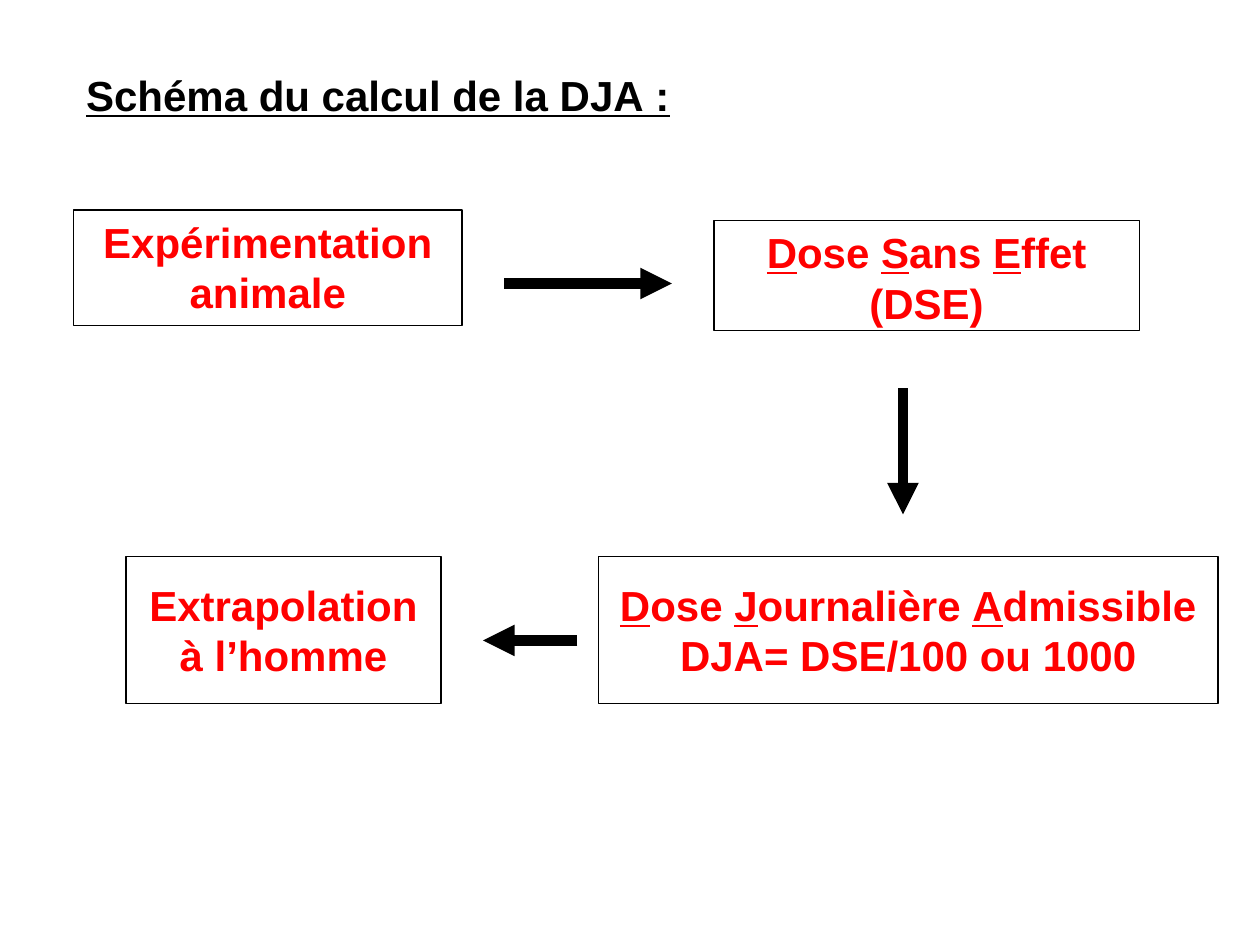
"""Build the slide showing how the acceptable daily intake (DJA) is worked out."""
from dataclasses import dataclass

from lxml.etree import SubElement
from pptx import Presentation
from pptx.dml.color import RGBColor
from pptx.enum.shapes import MSO_CONNECTOR, MSO_SHAPE
from pptx.enum.text import MSO_ANCHOR, PP_ALIGN
from pptx.oxml.ns import qn
from pptx.util import Pt


@dataclass(frozen=True)
class Theme:
    font: str = "Arial"
    size: int = 24
    ink: RGBColor = RGBColor(0, 0, 0)
    accent: RGBColor = RGBColor(255, 0, 0)
    paper: RGBColor = RGBColor(255, 255, 255)


theme = Theme()


def write(frame, text, *, color, align, top=3.6):
    """Write bold text in which pieces between underscores are underlined."""
    frame.word_wrap = True
    frame.vertical_anchor = MSO_ANCHOR.TOP
    frame.margin_left = frame.margin_right = Pt(7.2)
    frame.margin_top, frame.margin_bottom = Pt(top), Pt(3.6)
    paragraph = frame.paragraphs[0]
    paragraph.alignment = align
    paragraph.space_before = Pt(0)
    paragraph.line_spacing = 1.0
    for index, piece in enumerate(text.split("_")):
        if piece:
            run = paragraph.add_run()
            run.text = piece
            run.font.name, run.font.size = theme.font, Pt(theme.size)
            run.font.bold, run.font.underline = True, index % 2 == 1
            run.font.color.rgb = color


deck = Presentation()
deck.slide_width, deck.slide_height = Pt(720), Pt(540)
slide = deck.slides.add_slide(deck.slide_layouts[5])

heading = slide.shapes.title
heading.left, heading.top, heading.width, heading.height = Pt(42), Pt(36), Pt(540), Pt(79)
write(heading.text_frame, "_Schéma du calcul de la DJA\u00a0:_",
      color=theme.ink, align=PP_ALIGN.JUSTIFY)

steps = [
    ("Expérimentation animale", 42, 120, 222, 66, 3.6),
    ("_D_ose _S_ans _E_ffet (DSE)", 408, 126, 243, 63, 3.6),
    ("_D_ose _J_ournalière _A_dmissible DJA= DSE/100 ou 1000", 342, 318, 354, 84, 13),
    ("Extrapolation à l’homme", 72, 318, 180, 84, 13),
]
for label, left, top, width, height, inset in steps:
    step = slide.shapes.add_shape(MSO_SHAPE.RECTANGLE, Pt(left), Pt(top), Pt(width), Pt(height))
    step.shadow.inherit = False
    step.fill.solid()
    step.fill.fore_color.rgb = theme.paper
    step.line.color.rgb = theme.ink
    step.line.width = Pt(0.75)
    write(step.text_frame, label, color=theme.accent, align=PP_ALIGN.CENTER, top=inset)

for ends in [(288, 162, 384, 162), (516, 222, 516, 294), (330, 366, 276, 366)]:
    arrow = slide.shapes.add_connector(MSO_CONNECTOR.STRAIGHT, *map(Pt, ends))
    arrow.line.color.rgb = theme.ink
    arrow.line.width = Pt(6)
    SubElement(arrow.line._get_or_add_ln(), qn("a:tailEnd"), type="triangle")
    SubElement(arrow._element.spPr, qn("a:effectLst"))

deck.save("out.pptx")
